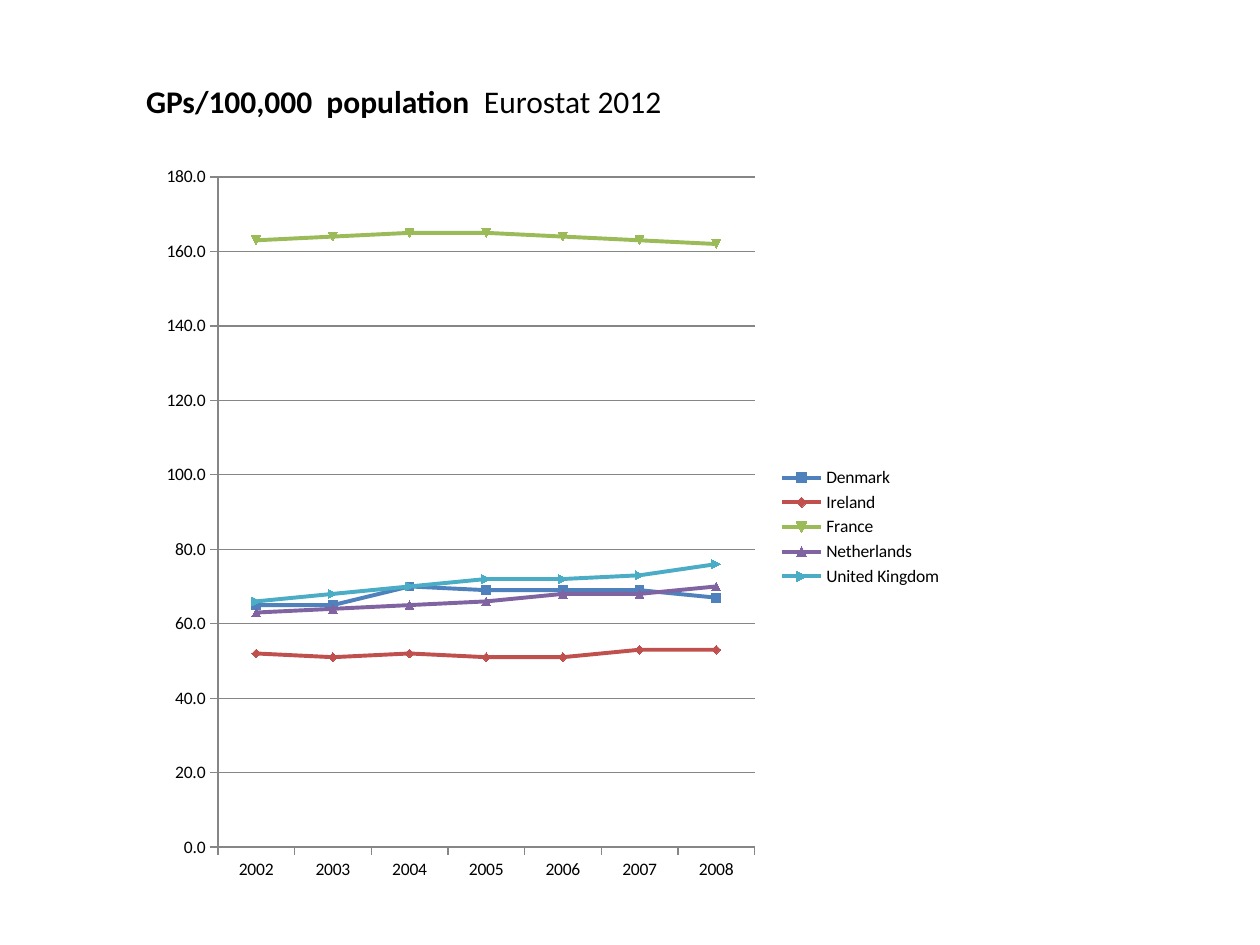
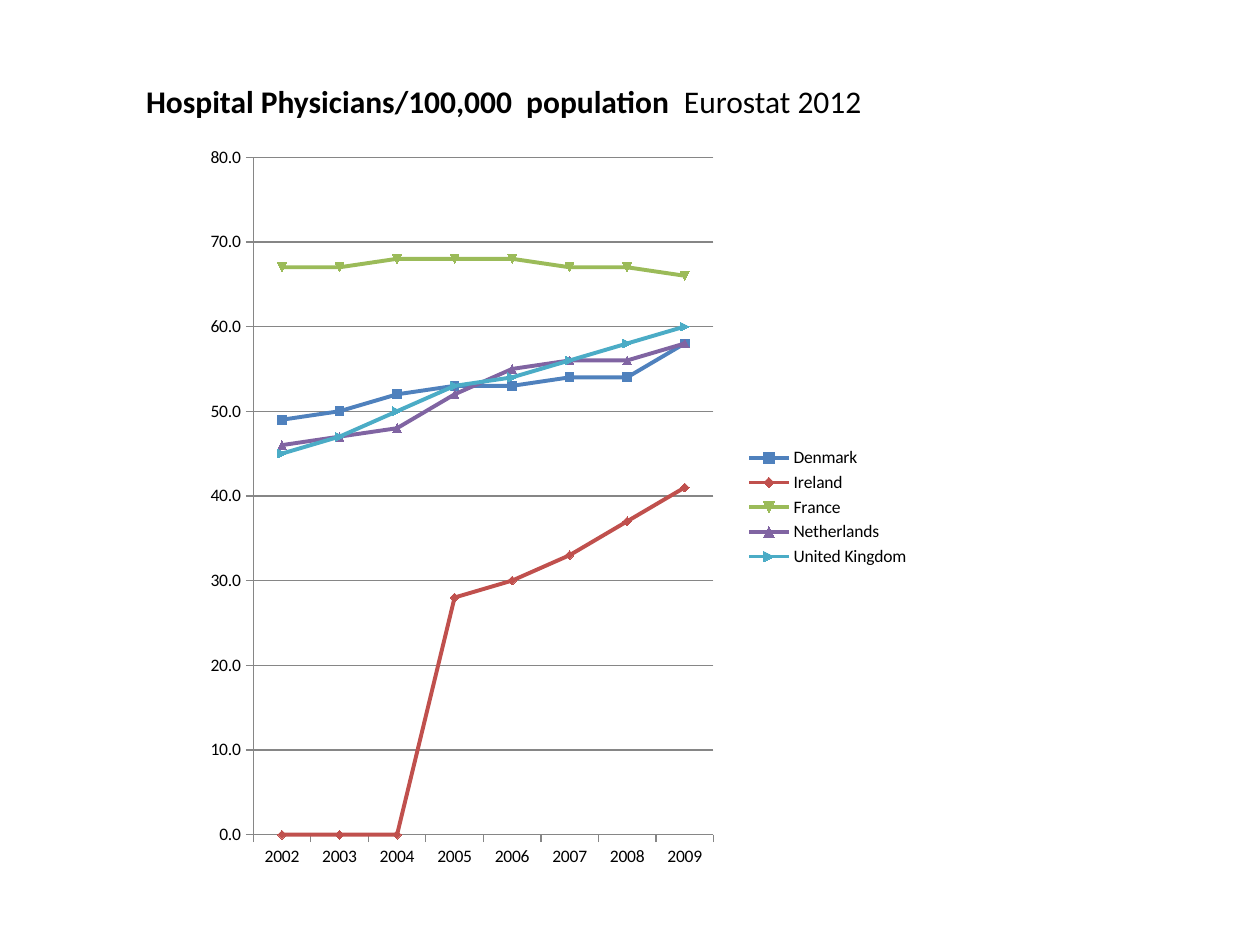
from dataclasses import dataclass

from lxml.etree import Element, SubElement
from pptx import Presentation
from pptx.chart.chart import Chart
from pptx.chart.data import CategoryChartData as ChartData
from pptx.dml.color import RGBColor
from pptx.enum.chart import XL_CHART_TYPE as Kind
from pptx.enum.chart import XL_LEGEND_POSITION as Place
from pptx.enum.chart import XL_TICK_MARK as Tick
from pptx.enum.text import MSO_ANCHOR as Anchor
from pptx.enum.text import MSO_AUTO_SIZE as Fit
from pptx.enum.text import PP_ALIGN as Align
from pptx.oxml.ns import qn
from pptx.util import Cm, Pt

FONT = "Calibri"
BLACK = "000000"
GREY = "868686"
NATIONS = {
    "Denmark": "4F81BD",
    "Ireland": "C0504D",
    "France": "9BBB59",
    "Netherlands": "8064A2",
    "United Kingdom": "4BACC6",
}


@dataclass(frozen=True)
class Page:
    topic: str
    box: tuple[float, float, float, float]
    plot: tuple[float, float, float, float]
    top: int
    step: int
    rows: tuple[tuple[int, ...], ...]


PAGES = (
    Page(
        "GPs/100,000  population  ",
        (3.1, 3.12, 16.15, 15.01),
        (0.08, 0.03, 0.67, 0.9),
        180,
        20,
        (
            (65, 65, 70, 69, 69, 69, 67),
            (52, 51, 52, 51, 51, 53, 53),
            (163, 164, 165, 165, 164, 163, 162),
            (63, 64, 65, 66, 68, 68, 70),
            (66, 68, 70, 72, 72, 73, 76),
        ),
    ),
    Page(
        "Hospital Physicians/100,000  population  ",
        (4.09, 2.72, 14.5, 15.01),
        (0.07, 0.03, 0.64, 0.91),
        80,
        10,
        (
            (49, 50, 52, 53, 53, 54, 54, 58),
            (0, 0, 0, 28, 30, 33, 37, 41),
            (67, 67, 68, 68, 68, 67, 67, 66),
            (46, 47, 48, 52, 55, 56, 56, 58),
            (45, 47, 50, 53, 54, 56, 58, 60),
        ),
    ),
)


def tint(code: str) -> RGBColor:
    return RGBColor.from_string(code)


def style_font(font, size: float) -> None:
    font.name = FONT
    font.size = Pt(size)
    font.color.rgb = tint(BLACK)


def style_line(line, code: str, width: float) -> None:
    line.color.rgb = tint(code)
    line.width = Pt(width)


def draw_title(slide, topic: str) -> None:
    title = slide.shapes.title
    title.left, title.top = Cm(2.69), Cm(1.52)
    title.width, title.height = Cm(18.39), Cm(1.02)
    frame = title.text_frame
    frame.word_wrap = True
    frame.auto_size = Fit.SHAPE_TO_FIT_TEXT
    frame.vertical_anchor = Anchor.TOP
    para = frame.paragraphs[0]
    para.alignment = Align.LEFT
    style_font(para.font, 18)
    for text, bold in ((topic, True), ("Eurostat 2012", False)):
        run = para.add_run()
        run.text = text
        run.font.bold = bold


def place_plot(chart: Chart, plot: tuple[float, ...]) -> None:
    area = chart.element.find(".//" + qn("c:plotArea"))
    for old in area.findall(qn("c:layout")):
        area.remove(old)
    layout = Element(qn("c:layout"))
    area.insert(0, layout)
    manual = SubElement(layout, qn("c:manualLayout"))
    names = ("layoutTarget", "xMode", "yMode", "x", "y", "w", "h")
    for name, value in zip(names, ("inner", "edge", "edge", *plot)):
        SubElement(manual, qn("c:" + name)).set("val", str(value))


def style_axes(chart: Chart, page: Page) -> None:
    for axis in (chart.category_axis, chart.value_axis):
        axis.major_tick_mark = Tick.OUTSIDE
        axis.minor_tick_mark = Tick.NONE
        style_line(axis.format.line, GREY, 0.75)
    scale = chart.value_axis
    scale.minimum_scale, scale.maximum_scale = 0, page.top
    scale.major_unit = page.step
    scale.tick_labels.number_format = "#,##0.0"
    scale.tick_labels.number_format_is_linked = False
    scale.has_major_gridlines = True
    style_line(scale.major_gridlines.format.line, GREY, 0.75)


def draw_chart(slide, page: Page) -> None:
    data = ChartData()
    data.categories = [str(2002 + year) for year in range(len(page.rows[0]))]
    for name, row in zip(NATIONS, page.rows):
        data.add_series(name, row)
    box = [Cm(side) for side in page.box]
    chart = slide.shapes.add_chart(Kind.LINE_MARKERS, *box, data).chart
    chart.has_title = False
    style_font(chart.font, 10)
    chart.has_legend = True
    chart.legend.position = Place.RIGHT
    chart.legend.include_in_layout = False
    style_axes(chart, page)
    place_plot(chart, page.plot)
    chart.plots[0].vary_by_categories = False
    for series, code in zip(chart.plots[0].series, NATIONS.values()):
        series.smooth = False
        style_line(series.format.line, code, 2.25)
        mark = series.marker.format
        mark.fill.solid()
        mark.fill.fore_color.rgb = tint(code)
        style_line(mark.line, code, 0.75)


def main() -> None:
    deck = Presentation()
    deck.slide_width, deck.slide_height = Cm(25.4), Cm(19.05)
    for page in PAGES:
        slide = deck.slides.add_slide(deck.slide_layouts[5])
        draw_title(slide, page.topic)
        draw_chart(slide, page)
    deck.save("out.pptx")


if __name__ == "__main__":
    main()
